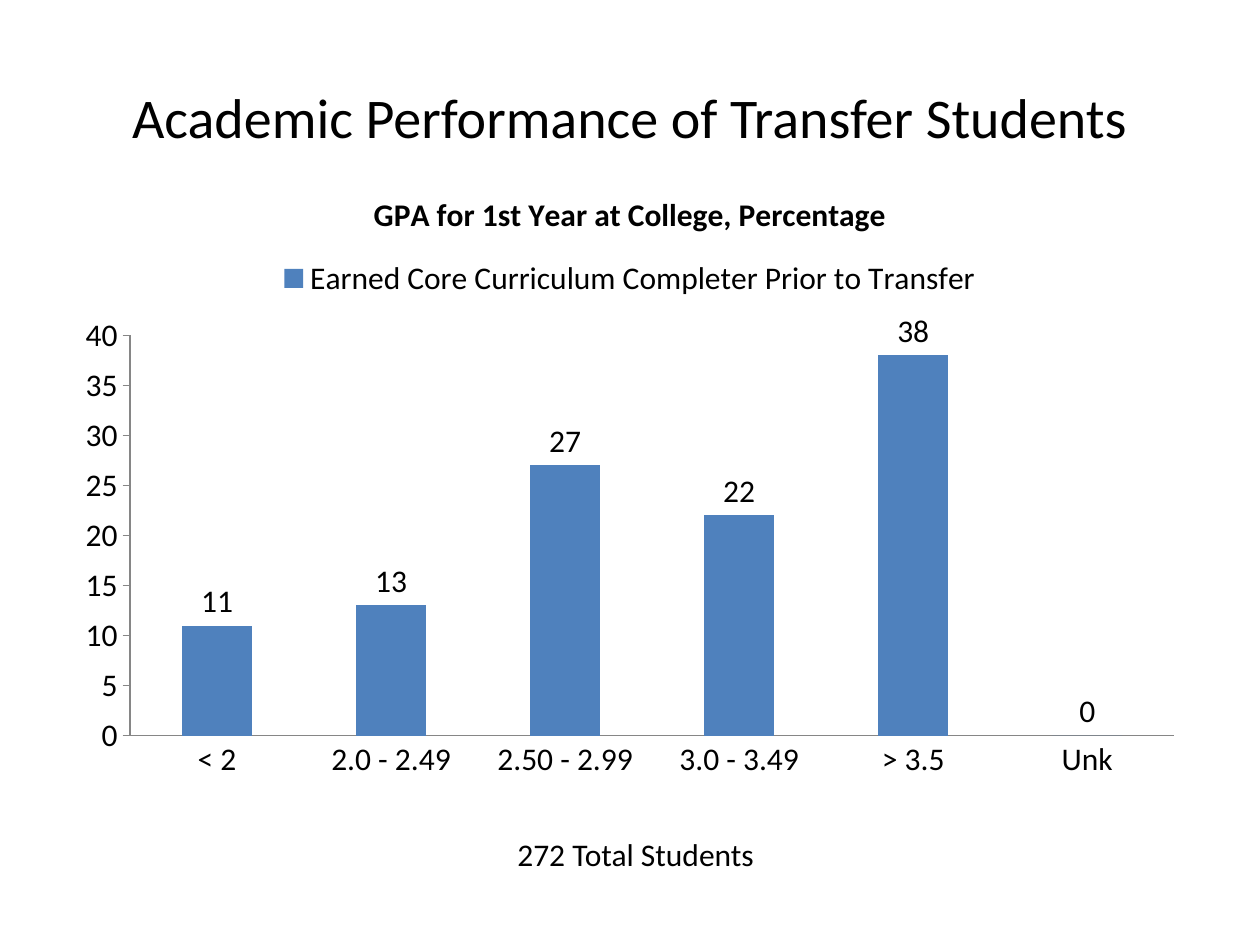
"""Build a slide with a column chart of first-year GPA for transfer students."""
from pptx import Presentation
from pptx.chart.data import CategoryChartData
from pptx.dml.color import RGBColor
from pptx.enum.chart import XL_CHART_TYPE as ChartType, XL_LABEL_POSITION as LabelPos
from pptx.enum.chart import XL_LEGEND_POSITION as LegendPos, XL_TICK_MARK as Tick
from pptx.enum.text import MSO_ANCHOR as Anchor, PP_ALIGN as Align
from pptx.util import Emu, Pt

PX = 9144


def box(*lengths):
    return [Emu(length * PX) for length in lengths]


def style(font, size, color="000000", bold=False):
    font.name, font.size, font.bold = "Calibri", Pt(size), bold
    font.color.rgb = RGBColor.from_string(color)


deck = Presentation()
deck.slide_width, deck.slide_height = box(1000, 750)
slide = deck.slides.add_slide(deck.slide_layouts[6])

for words, size, anchor, place in [
    ("Academic Performance of Transfer Students", 32, Anchor.MIDDLE, (50, 30, 900, 125)),
    ("272 Total Students", 18, Anchor.TOP, (92, 658, 825, 40)),
]:
    frame = slide.shapes.add_textbox(*box(*place)).text_frame
    frame.word_wrap = True
    frame.vertical_anchor = anchor
    line = frame.paragraphs[0]
    line.alignment = Align.CENTER
    run = line.add_run()
    run.text = words
    style(run.font, size)

grades = CategoryChartData(number_format="#,##0")
grades.categories = ["< 2", "2.0 - 2.49", "2.50 - 2.99", "3.0 - 3.49", "> 3.5", "Unk"]
grades.add_series("Earned Core Curriculum Completer Prior to Transfer", [11, 13, 27, 22, 38, 0])
chart = slide.shapes.add_chart(ChartType.COLUMN_CLUSTERED, *box(50, 133, 900, 495), grades).chart
style(chart.font, 18)

chart.has_title = True
heading = chart.chart_title.text_frame.paragraphs[0].add_run()
heading.text = "GPA for 1st Year at College, Percentage"
style(heading.font, 18, bold=True)
chart.chart_title.include_in_layout = False

chart.has_legend = True
chart.legend.position = LegendPos.TOP
chart.legend.include_in_layout = False

gpa_axis, percent_axis = chart.category_axis, chart.value_axis
gpa_axis.major_tick_mark = Tick.NONE
percent_axis.major_tick_mark = Tick.OUTSIDE
percent_axis.has_major_gridlines = False
percent_axis.minimum_scale, percent_axis.maximum_scale = 0, 40
percent_axis.major_unit = 5
for axis in (gpa_axis, percent_axis):
    axis.format.line.color.rgb = RGBColor.from_string("868686")
    axis.format.line.width = Pt(0.75)

plot = chart.plots[0]
plot.gap_width, plot.overlap = 150, -25
plot.vary_by_categories = False
completers = plot.series[0]
completers.format.fill.solid()
completers.format.fill.fore_color.rgb = RGBColor.from_string("4F81BD")
labels = completers.data_labels
labels.show_value = True
labels.number_format, labels.number_format_is_linked = "#,##0", False
labels.position = LabelPos.OUTSIDE_END
style(labels.font, 18)

deck.save("out.pptx")
